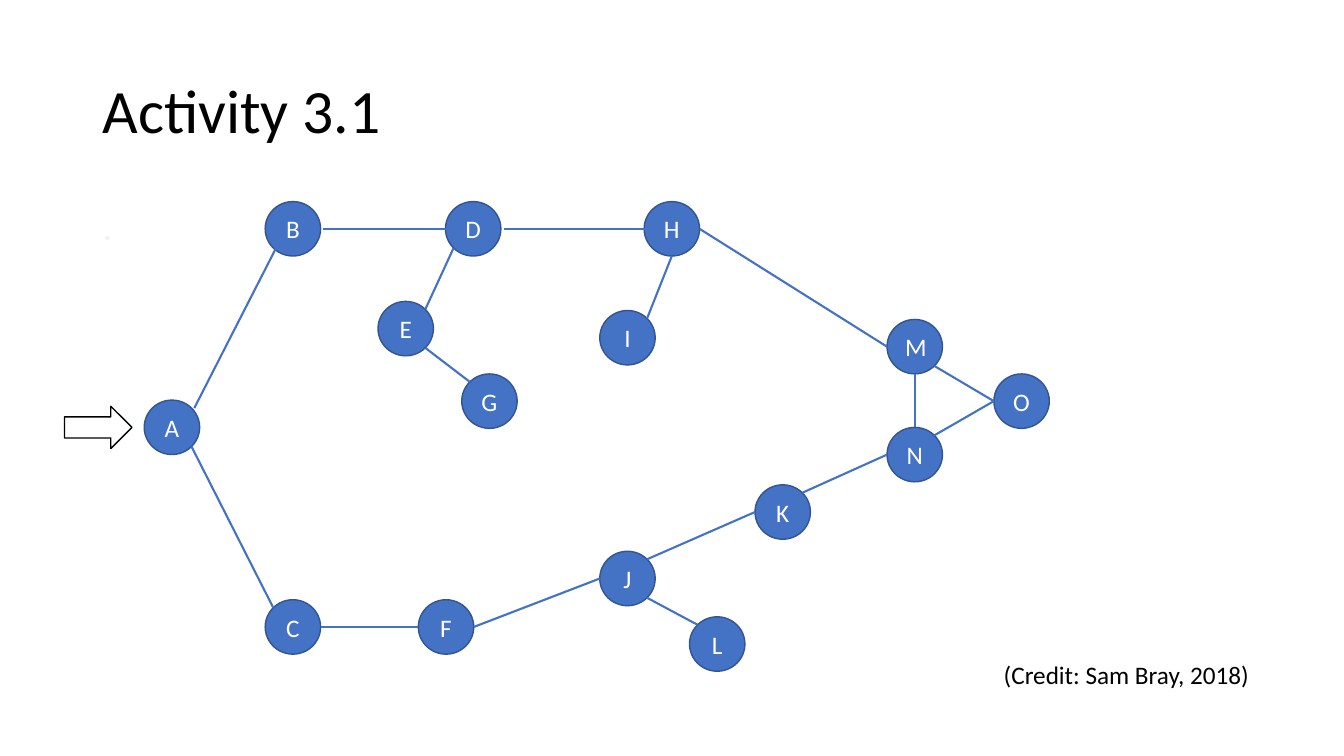
from dataclasses import dataclass
from math import sqrt
from typing import Any

from lxml import etree
from pptx import Presentation
from pptx.dml.color import RGBColor
from pptx.enum import shapes, text
from pptx.oxml.ns import qn
from pptx.util import Pt


@dataclass(frozen=True)
class Theme:
    font: str = "Calibri"
    node_fill: str = "4472C4"
    node_line: str = "325491"
    black: str = "000000"
    white: str = "FFFFFF"
    faint: str = "F2F2F2"
    title_size: float = 44
    body_size: float = 28
    label_size: float = 18
    outline: float = 1
    edge_width: float = 1.5


@dataclass(frozen=True)
class Node:
    label: str
    left: float
    top: float


@dataclass(frozen=True)
class Edge:
    start: str
    start_side: str
    end: str
    end_side: str
    shift: float = 0


THEME = Theme()
NODE_W, NODE_H = 39.6, 38.9
DIAGONAL = sqrt(0.5)
SIDES = {
    "n": (0, -1), "s": (0, 1), "w": (-1, 0), "e": (1, 0),
    "nw": (-DIAGONAL, -DIAGONAL), "ne": (DIAGONAL, -DIAGONAL),
    "sw": (-DIAGONAL, DIAGONAL), "se": (DIAGONAL, DIAGONAL),
}

NODES = [
    Node("A", 103, 285.8),
    Node("B", 189.4, 144),
    Node("C", 189.4, 428.4),
    Node("D", 318.2, 144),
    Node("E", 270, 215.3),
    Node("G", 329.8, 267.1),
    Node("F", 298.8, 428.4),
    Node("H", 460.1, 144),
    Node("I", 428.4, 221.8),
    Node("J", 428.4, 393.8),
    Node("L", 492.5, 440.6),
    Node("K", 539.3, 346.3),
    Node("M", 633.6, 228.2),
    Node("N", 633.6, 305.3),
    Node("O", 709.9, 267.1),
]

EDGES = [
    Edge("A", "ne", "B", "sw", shift=2),
    Edge("A", "se", "C", "nw"),
    Edge("B", "e", "D", "w", shift=2),
    Edge("C", "e", "F", "w"),
    Edge("F", "e", "J", "w"),
    Edge("D", "e", "H", "w", shift=2),
    Edge("D", "sw", "E", "ne"),
    Edge("E", "se", "G", "nw"),
    Edge("H", "s", "I", "ne"),
    Edge("H", "e", "M", "w"),
    Edge("J", "se", "L", "nw"),
    Edge("J", "ne", "K", "w"),
    Edge("K", "ne", "N", "w"),
    Edge("M", "s", "N", "n"),
    Edge("M", "se", "O", "w"),
    Edge("N", "ne", "O", "w"),
]


def apply(target: Any, **formats: Any) -> None:
    for name, value in formats.items():
        setattr(target, name, value)


def place(sp: Any, left: float, top: float, width: float, height: float) -> None:
    apply(sp, left=Pt(left), top=Pt(top), width=Pt(width), height=Pt(height))


def write(sp: Any, content: str, size: float, color: str,
          frame: dict[str, Any], paragraph: dict[str, Any]) -> None:
    tf = sp.text_frame
    apply(tf, **frame)
    p = tf.paragraphs[0]
    apply(p, **paragraph)
    r = p.add_run()
    r.text = content
    apply(r.font, name=THEME.font, size=Pt(size))
    r.font.color.rgb = RGBColor.from_string(color)


def add_outlined(slide: Any, kind: Any, box: tuple[float, float, float, float],
                 fill: str, line: str) -> Any:
    sp = slide.shapes.add_shape(kind, *map(Pt, box))
    sp.shadow.inherit = False
    sp.fill.solid()
    sp.fill.fore_color.rgb = RGBColor.from_string(fill)
    sp.line.color.rgb = RGBColor.from_string(line)
    sp.line.width = Pt(THEME.outline)
    return sp


def add_node(slide: Any, node: Node) -> None:
    sp = add_outlined(slide, shapes.MSO_SHAPE.OVAL, (node.left, node.top, NODE_W, NODE_H),
                      THEME.node_fill, THEME.node_line)
    write(sp, node.label, THEME.label_size, THEME.white,
          {"vertical_anchor": text.MSO_ANCHOR.MIDDLE},
          {"alignment": text.PP_ALIGN.CENTER})


def rim_point(node: Node, side: str, shift: float) -> tuple[Pt, Pt]:
    """Return the point on the node's outline, moved right by shift."""
    dx, dy = SIDES[side]
    return (Pt(node.left + NODE_W / 2 * (1 + dx) + shift),
            Pt(node.top + NODE_H / 2 * (1 + dy)))


def add_edge(slide: Any, edge: Edge, nodes: dict[str, Node]) -> None:
    start = rim_point(nodes[edge.start], edge.start_side, edge.shift)
    end = rim_point(nodes[edge.end], edge.end_side, edge.shift)
    cxn = slide.shapes.add_connector(shapes.MSO_CONNECTOR.STRAIGHT, *start, *end)
    cxn.line.color.rgb = RGBColor.from_string(THEME.node_fill)
    cxn.line.width = Pt(THEME.edge_width)
    etree.SubElement(cxn._element.spPr, qn("a:effectLst"))


def add_text(slide: Any, box: tuple[float, float, float, float], content: str, size: float,
             color: str, frame: dict[str, Any], paragraph: dict[str, Any]) -> None:
    sp = slide.shapes.add_textbox(*map(Pt, box))
    write(sp, content, size, color, frame, paragraph)


def main() -> None:
    prs = Presentation()
    apply(prs, slide_width=Pt(960), slide_height=Pt(540))
    slide = prs.slides.add_slide(prs.slide_layouts.get_by_name("Title Only"))

    title = slide.shapes.title
    place(title, 66, 28.8, 828, 104.4)
    write(title, "Activity 3.1", THEME.title_size, THEME.black,
          {"vertical_anchor": text.MSO_ANCHOR.MIDDLE, "auto_size": text.MSO_AUTO_SIZE.NONE},
          {"alignment": text.PP_ALIGN.LEFT, "line_spacing": 0.9})
    add_text(slide, (66, 144, 828, 342.7), ".", THEME.body_size, THEME.faint,
             {"word_wrap": True}, {"line_spacing": 0.9, "space_before": Pt(10)})

    for node in NODES:
        add_node(slide, node)
    nodes = {node.label: node for node in NODES}
    for edge in EDGES:
        add_edge(slide, edge, nodes)

    add_outlined(slide, shapes.MSO_SHAPE.RIGHT_ARROW, (46.1, 290.2, 48.2, 30.2),
                 THEME.white, THEME.black)
    add_text(slide, (709.9, 467.3, 191.5, 28.8), "(Credit: Sam Bray, 2018)",
             THEME.label_size, THEME.black,
             {"word_wrap": False, "auto_size": text.MSO_AUTO_SIZE.SHAPE_TO_FIT_TEXT}, {})
    prs.save("out.pptx")


if __name__ == "__main__":
    main()
